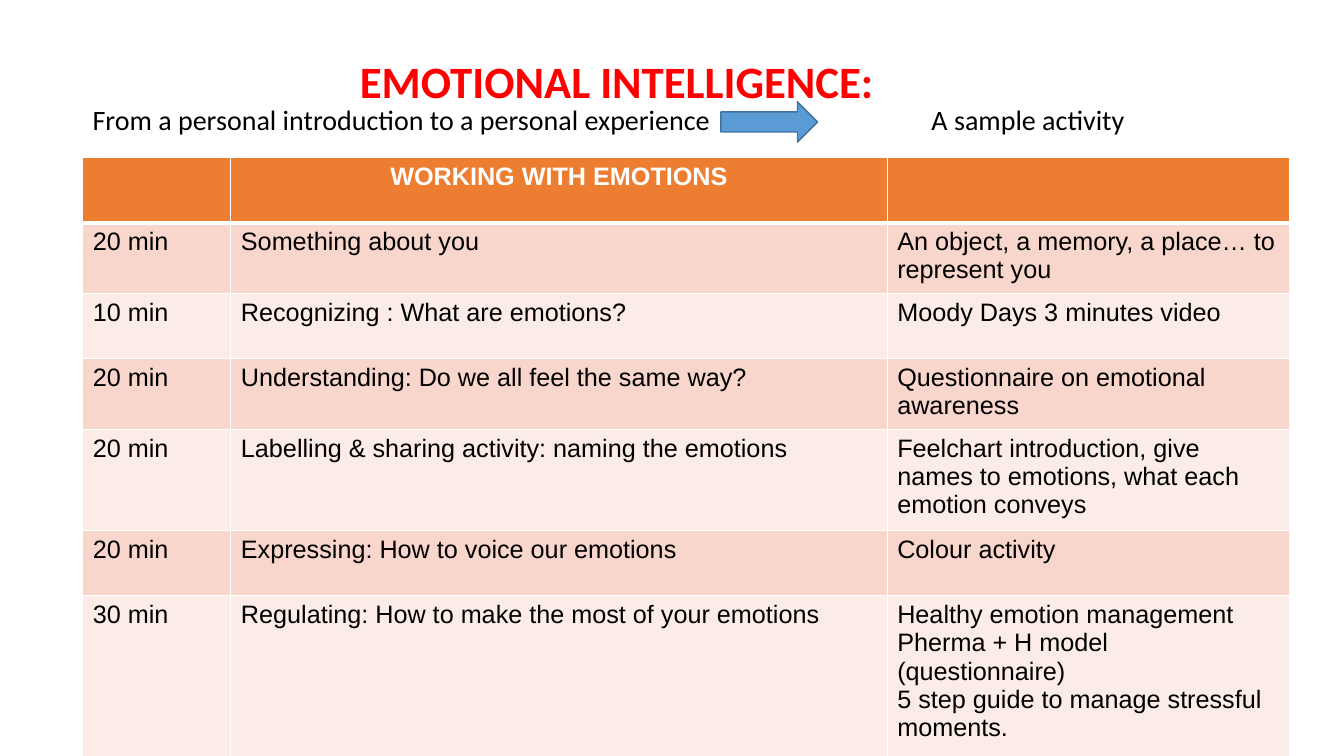
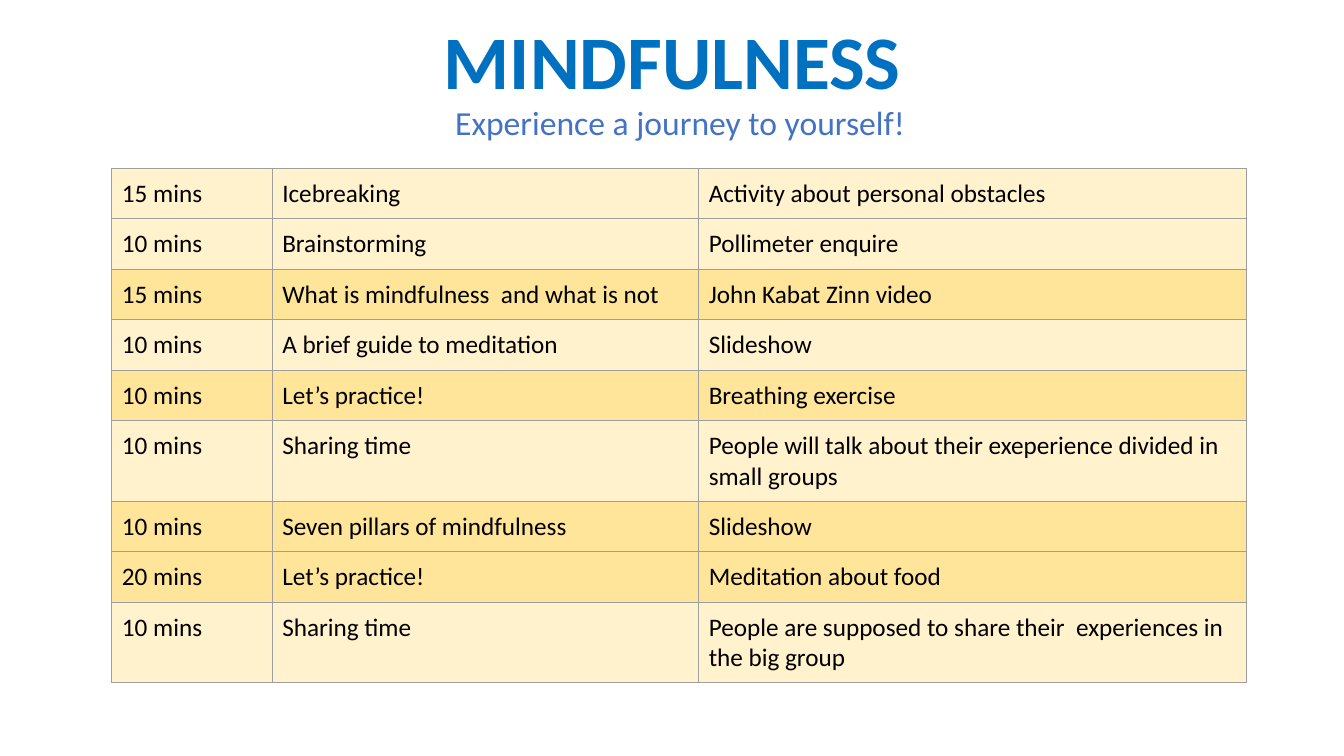
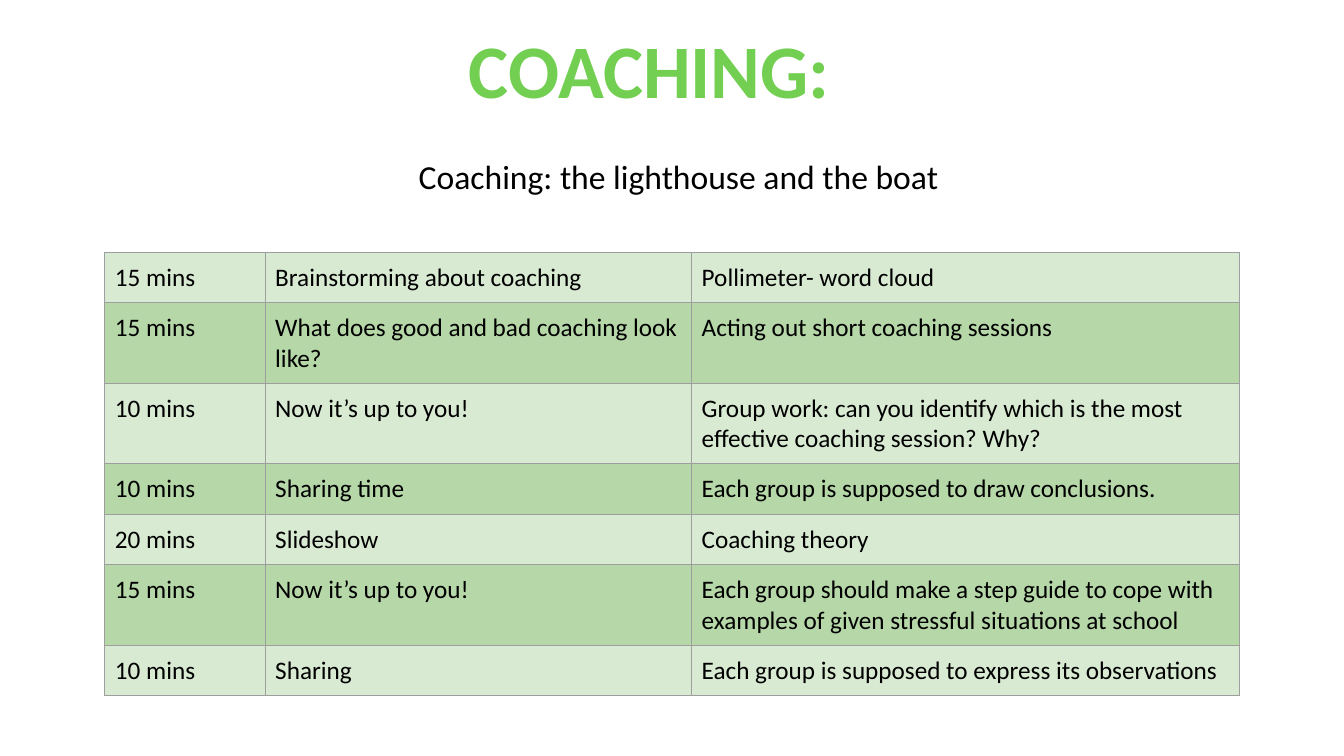
"""Build three workshop agenda slides, each with a title, a subtitle and a timetable."""
from lxml import etree
from pptx import Presentation
from pptx.dml.color import RGBColor
from pptx.enum import shapes, text
from pptx.oxml import ns
from pptx.util import Inches, Pt

FONT = "Calibri"
BLACK, WHITE, GREY = "000000", "FFFFFF", "9E9E9E"
LEFT, MID = text.PP_ALIGN.LEFT, text.PP_ALIGN.CENTER
TOP, LOW = text.MSO_ANCHOR.TOP, text.MSO_ANCHOR.BOTTOM
COLS = (1.59, 4.23, 5.43)

EMOTION = [
    ("", "WORKING WITH EMOTIONS", ""),
    ("20 min", "Something about you", "An object, a memory, a place… to represent you"),
    ("10 min", "Recognizing : What are emotions?", "Moody Days 3 minutes video"),
    ("20 min", "Understanding: Do we all feel the same way?",
     "Questionnaire on emotional awareness"),
    ("20 min", "Labelling & sharing activity: naming the emotions",
     "Feelchart introduction, give names to emotions, what each emotion conveys"),
    ("20 min", "Expressing: How to voice our emotions", "Colour activity"),
    ("30 min", "Regulating: How to make the most of your emotions",
     "Healthy emotion management\nPherma + H model (questionnaire)\n"
     "5 step guide to manage stressful moments."),
]
MINDFUL = [
    ("15 mins", "Icebreaking", "Activity about personal obstacles"),
    ("10 mins", "Brainstorming", "Pollimeter enquire"),
    ("15 mins", "What is mindfulness  and what is not", "John Kabat Zinn video"),
    ("10 mins", "A brief guide to meditation", "Slideshow"),
    ("10 mins", "Let’s practice!", "Breathing exercise"),
    ("10 mins", "Sharing time",
     "People will talk about their exeperience divided in small groups"),
    ("10 mins", "Seven pillars of mindfulness", "Slideshow"),
    ("20 mins", "Let’s practice!", "Meditation about food"),
    ("10 mins", "Sharing time",
     "People are supposed to share their  experiences in the big group"),
]
COACH = [
    ("15 mins", "Brainstorming about coaching", "Pollimeter- word cloud"),
    ("15 mins", "What does good and bad coaching look like?",
     "Acting out short coaching sessions"),
    ("10 mins", "Now it’s up to you!",
     "Group work: can you identify which is the most effective coaching session? Why?"),
    ("10 mins", "Sharing time", "Each group is supposed to draw conclusions."),
    ("20 mins", "Slideshow", "Coaching theory"),
    ("15 mins", "Now it’s up to you!",
     "Each group should make a step guide to cope with examples of given "
     "stressful situations at school"),
    ("10 mins", "Sharing", "Each group is supposed to express its observations"),
]


def color(code):
    """Turn a hex string into a colour."""
    return RGBColor.from_string(code)


def write(frame, words, size=18, tint=BLACK, bold=False, align=LEFT, font=FONT, lead=None):
    """Fill a text frame, one paragraph for each line."""
    frame.text = words
    for para in frame.paragraphs:
        para.alignment, para.line_spacing = align, lead
        for run in para.runs:
            run.font.name, run.font.size, run.font.bold = font, Pt(size), bold
            run.font.color.rgb = color(tint)


def label(slide, box, words, anchor=TOP, **style):
    """Add a text box with tight line spacing."""
    frame = slide.shapes.add_textbox(*map(Inches, box)).text_frame
    frame.word_wrap, frame.vertical_anchor = True, anchor
    write(frame, words, lead=0.9, **style)


def title(slide, box, words, **style):
    """Add a bold, centred title resting on the bottom of its box."""
    label(slide, box, words, anchor=LOW, bold=True, align=MID, **style)


def edge(cell, tint, width, base):
    """Draw the four borders of a cell; base is the width of the lower one."""
    props = cell._tc.get_or_add_tcPr()
    for spot, side in enumerate("LRTB"):
        line = etree.Element(ns.qn("a:ln" + side), w=str(Pt(base if side == "B" else width)))
        fill = etree.SubElement(line, ns.qn("a:solidFill"))
        etree.SubElement(fill, ns.qn("a:srgbClr"), val=tint)
        props.insert(spot, line)


def agenda(slide, left, top, rows, bands, fills, cols=COLS, high=0.5, pad=0.1,
           rule=GREY, width=0.75, font=FONT):
    """Add a timetable; bands holds one key of fills for each row, H for a header."""
    grid = slide.shapes.add_table(len(rows), len(cols), Inches(left), Inches(top),
                                  Inches(sum(cols)), Inches(high * len(rows))).table
    grid.first_row = grid.horz_banding = False
    for col, size in zip(grid.columns, cols):
        col.width = Inches(size)
    for line, row, band in zip(grid.rows, rows, bands):
        line.height = Inches(high)
        head = band == "H"
        for cell, words in zip(line.cells, row):
            cell.margin_left = cell.margin_right = Inches(0.1)
            cell.margin_top = cell.margin_bottom = Inches(pad)
            cell.fill.solid()
            cell.fill.fore_color.rgb = color(fills[band])
            edge(cell, rule, width, 3 if head else width)
            write(cell.text_frame, words, font=font, bold=head,
                  tint=WHITE if head else BLACK, align=MID if head else LEFT)


def arrow(slide, box):
    """Add the blue block arrow."""
    shape = slide.shapes.add_shape(shapes.MSO_SHAPE.RIGHT_ARROW, *map(Inches, box))
    shape.shadow.inherit = False
    shape.fill.solid()
    shape.fill.fore_color.rgb = color("5B9BD5")
    shape.line.color.rgb = color("42719B")
    shape.line.width = Pt(1)


def main():
    """Build and save the deck."""
    deck = Presentation()
    deck.slide_width, deck.slide_height = Inches(13.33), Inches(7.5)
    first, second, third = (deck.slides.add_slide(deck.slide_layouts[6]) for _ in range(3))

    title(first, (1.12, 0.41, 10, 0.71), "EMOTIONAL INTELLIGENCE:", size=32, tint="FF0000")
    label(first, (0.82, 1.01, 6.5, 0.4),
          "From a personal introduction to a personal experience", size=20)
    label(first, (9.14, 1.01, 3.75, 0.4), "A sample activity", size=20)
    agenda(first, 0.82, 1.56, EMOTION, "HDLDLDL",
           {"H": "ED7D31", "D": "F8D6CC", "L": "FCECE7"}, cols=(1.47, 6.51, 3.99),
           high=0.65, pad=0.05, rule=WHITE, width=1, font="Arial")
    arrow(first, (7.15, 1.01, 0.96, 0.4))

    title(second, (1.67, 0.33, 10, 0.77), "MINDFULNESS", size=54, tint="0070C0")
    agenda(second, 1.11, 1.67, MINDFUL, "LLDLDLDDL", {"D": "FFE599", "L": "FFF2CC"})
    label(second, (1.19, 0.97, 11.11, 0.49), "Experience a journey to yourself!",
          anchor=LOW, size=24, tint="4472C4", align=MID)

    title(third, (1.44, 0.55, 10, 0.64), "COACHING:", size=54, tint="72CF51")
    label(third, (0.63, 1.54, 12.2, 0.5), "Coaching: the lighthouse and the boat",
          size=24, align=MID)
    agenda(third, 1.04, 2.5, COACH, "LDLDLDL", {"D": "B6D7A8", "L": "D9EAD3"})

    deck.save("out.pptx")


if __name__ == "__main__":
    main()
